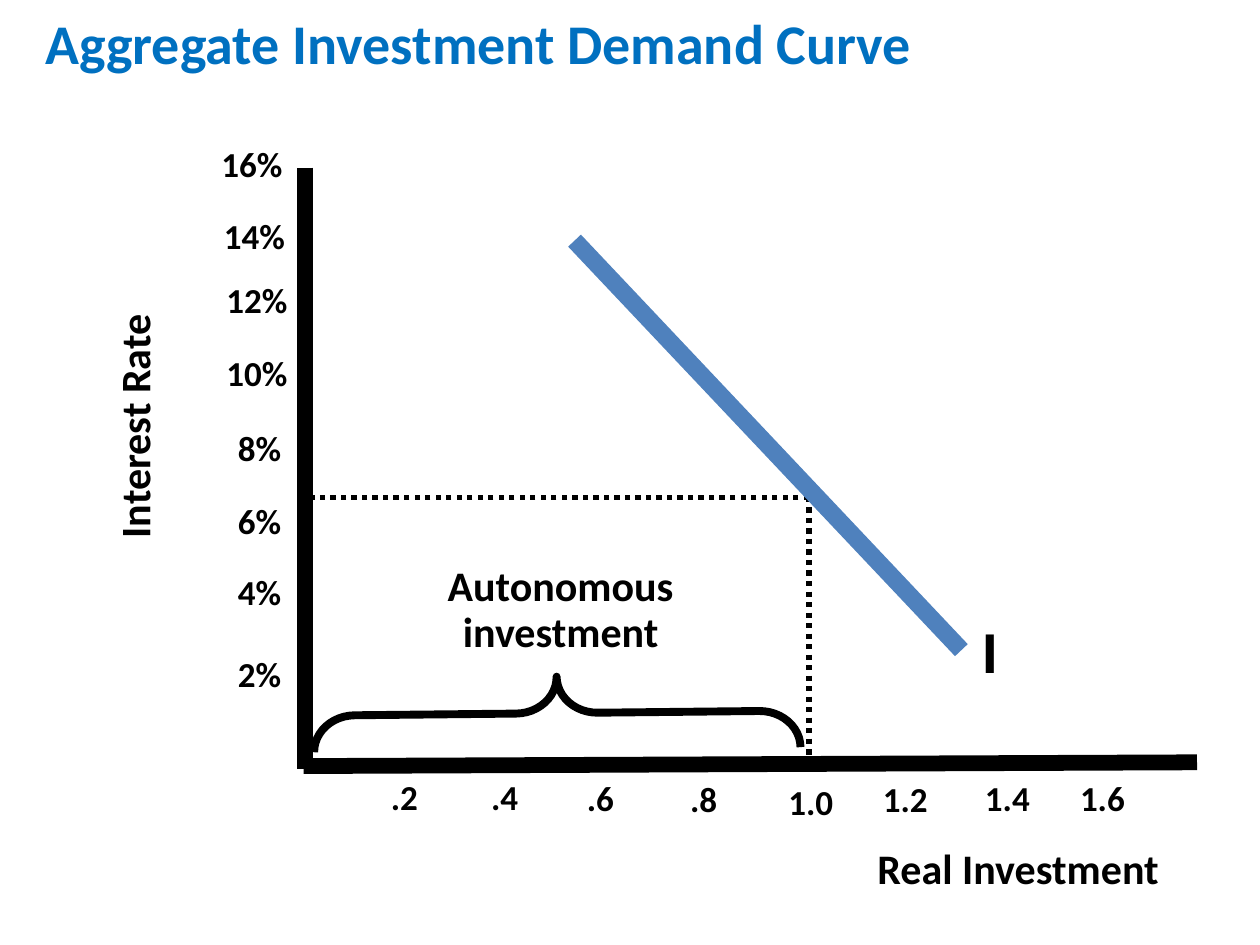
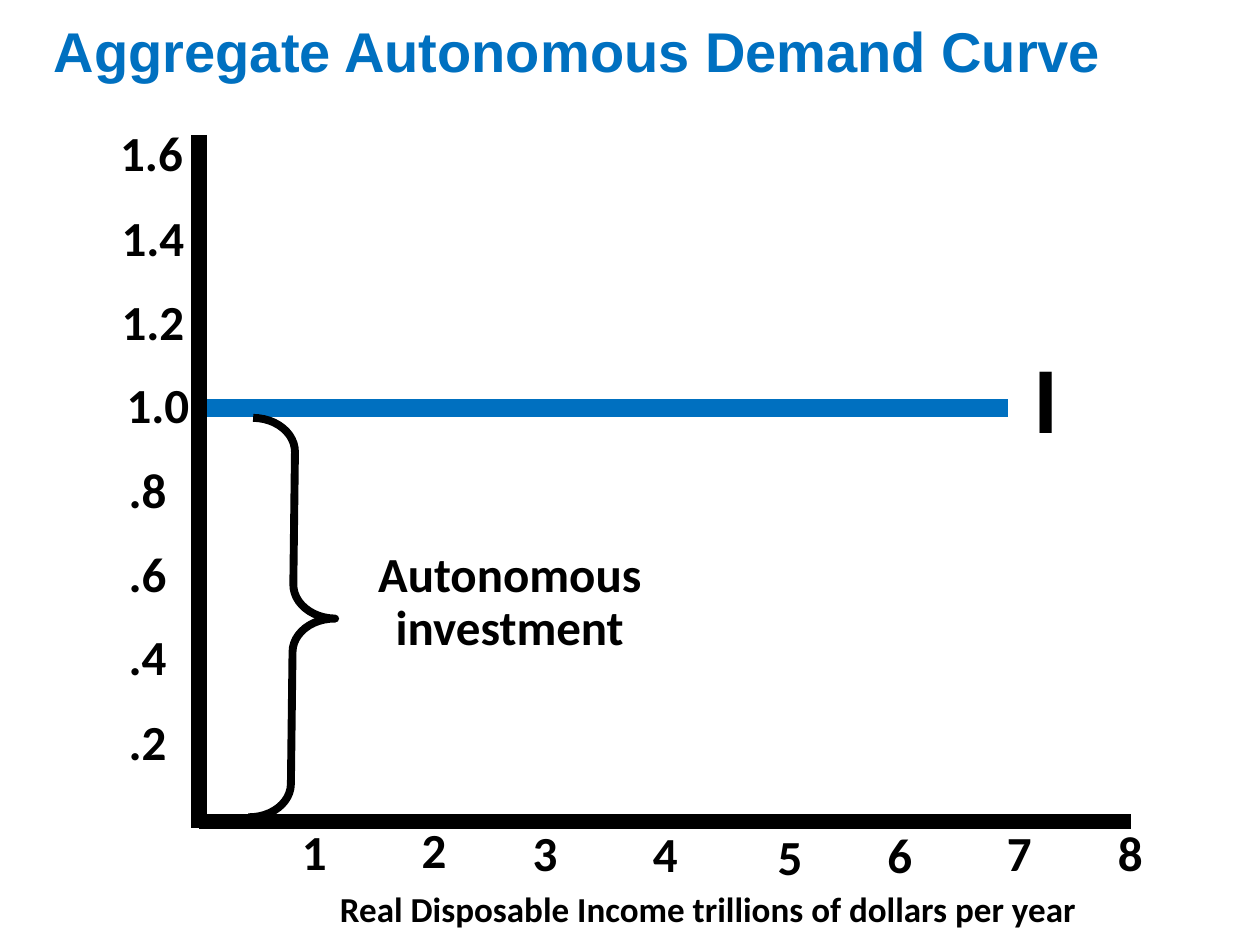
from pptx import Presentation
from pptx.dml.color import RGBColor
from pptx.enum.dml import MSO_LINE as Dash
from pptx.enum.shapes import MSO_CONNECTOR as Connector, MSO_SHAPE as Shape
from pptx.enum.text import MSO_AUTO_SIZE as AutoSize, PP_ALIGN as Align
from pptx.oxml.ns import qn
from pptx.util import Inches, Pt
from lxml.etree import SubElement

BLACK = RGBColor(0x00, 0x00, 0x00)
TITLE_BLUE = RGBColor(0x00, 0x70, 0xC0)
CURVE_BLUE = RGBColor(0x4F, 0x81, 0xBD)


class GraphDeck:
    """Hold the shared graph style and draw elements on the current slide."""

    font = "Calibri"
    axis_width = 9
    curve_width = 10
    brace_width = 4.5
    guide_width = 3

    def __init__(self):
        self.deck = Presentation()
        self.deck.slide_width = Inches(10)
        self.deck.slide_height = Inches(7.5)
        self.page = None

    def add_page(self):
        self.page = self.deck.slides.add_slide(self.deck.slide_layouts[6])

    def text(self, words, left, top, width, size, align=Align.CENTER, rotation=0, **changes):
        height = size * 0.0153 + 0.1
        if words == "Autonomous investment":
            height += size * 0.015
        box = self.page.shapes.add_textbox(*map(Inches, (left, top, width, height)))
        box.rotation = rotation
        box.text_frame.word_wrap = True
        box.text_frame.auto_size = AutoSize.SHAPE_TO_FIT_TEXT
        para = box.text_frame.paragraphs[0]
        para.alignment = align
        para.line_spacing = 0.9
        span = para.add_run()
        span.text = words
        color = changes.pop("color", BLACK)
        for name, value in {"name": self.font, "size": Pt(size), "bold": True, **changes}.items():
            setattr(span.font, name, value)
        span.font.color.rgb = color

    def title(self, words, left, top, width, font=font):
        self.text(words, left, top, width, 32, Align.LEFT, color=TITLE_BLUE, name=font)

    def ticks(self, labels, size, align):
        for words, left, top, width in labels:
            self.text(words, left, top, width, size, align)

    def line(self, start, end, width, color=BLACK, dash=None):
        line = self.page.shapes.add_connector(Connector.STRAIGHT, *map(Inches, start + end))
        line.line.color.rgb = color
        line.line.width = Pt(width)
        line.line.dash_style = dash
        SubElement(line._element.spPr, qn("a:effectLst"))

    def brace(self, left, top, width, height, rotation, curl):
        brace = self.page.shapes.add_shape(
            Shape.LEFT_BRACE, *map(Inches, (left, top, width, height)))
        brace.shadow.inherit = False
        brace.rotation = rotation
        brace.adjustments[0] = curl
        brace.adjustments[1] = 0.5
        brace.fill.background()
        brace.line.color.rgb = BLACK
        brace.line.width = Pt(self.brace_width)


def draw_investment_demand(graph):
    rates = [
        ("16%", 1.13, 1.12, 1.21), ("14%", 1.13, 1.69, 1.23),
        ("12%", 1.08, 2.2, 1.3), ("10%", 1.08, 2.78, 1.3),
        ("8%", 1.26, 3.37, 1.07), ("6%", 1.26, 3.95, 1.07),
        ("4%", 1.33, 4.52, 1), ("2%", 1.33, 5.17, 1),
    ]
    investments = [
        (".2", 2.85, 6.14, 0.72), (".4", 3.72, 6.14, 0.57),
        (".6", 4.48, 6.15, 0.57), (".8", 5.19, 6.16, 0.79),
        ("1.0", 6.04, 6.18, 0.79), ("1.2", 6.79, 6.16, 0.79),
        ("1.4", 7.6, 6.15, 0.79), ("1.6", 8.36, 6.15, 0.78),
    ]
    graph.add_page()
    graph.title("Aggregate Investment Demand Curve", 0.26, 0.08, 8.25)
    graph.ticks(rates, 20, Align.RIGHT)
    graph.ticks(investments, 20, Align.CENTER)
    graph.text("Autonomous investment", 3.2, 4.44, 2.5, 24)
    graph.brace(4.13, 3.73, 0.58, 3.86, 89.4, 0.56)
    for start, end in [((6.42, 3.95), (2.42, 3.95)), ((6.42, 3.86), (6.42, 6.1))]:
        graph.line(start, end, graph.guide_width, dash=Dash.ROUND_DOT)
    graph.text("Interest Rate", -0.3, 3.15, 2.78, 24, rotation=270)
    graph.text("Real Investment", 6.49, 6.68, 3.18, 24)
    graph.line((2.42, 1.33), (2.42, 6.1), graph.axis_width)
    graph.line((2.41, 6.08), (9.5, 6.05), graph.axis_width)
    graph.text("I", 7.7, 4.91, 1.05, 32, Align.LEFT, name="Arial")
    graph.line((4.56, 1.91), (7.63, 5.16), graph.curve_width, CURVE_BLUE)


def draw_autonomous_demand(graph):
    levels = [
        ("1.6", 0.55, 1), ("1.4", 0.54, 1.02), ("1.2", 0.54, 1.02), ("1.0", 0.83, 0.77),
        *((level, 0.69, 0.73) for level in (".8", ".6", ".4", ".2")),
    ]
    incomes = [
        ("1", 2.08, 6.52, 0.83), ("2", 3.11, 6.51, 0.67),
        ("3", 3.99, 6.53, 0.67), ("4", 4.82, 6.54, 0.92),
        ("5", 5.81, 6.56, 0.92), ("6", 6.68, 6.55, 0.92),
        ("7", 7.63, 6.53, 0.92), ("8", 8.51, 6.53, 0.92),
    ]
    graph.add_page()
    graph.line((1.58, 3.24), (8, 3.24), graph.curve_width, TITLE_BLUE)
    graph.line((1.58, 6.52), (8.98, 6.52), graph.axis_width)
    graph.ticks([(words, left, 0.98 + row * 2 / 3, width)
                 for row, (words, left, width) in enumerate(levels)], 28, Align.RIGHT)
    graph.ticks(incomes, 28, Align.CENTER)
    graph.line((1.58, 1.07), (1.58, 6.57), graph.axis_width)
    graph.text("Autonomous investment", 2.67, 4.32, 2.75, 28)
    graph.brace(1.99, 3.32, 0.67, 3.17, 180.7, 0.4)
    graph.text("Real Disposable Income trillions of dollars per year", 2.12, 7.03, 7, 20)
    graph.title("Aggregate Autonomous Demand Curve", 0.33, 0.14, 9.5, "Arial")
    graph.text("I", 7.92, 2.74, 0.58, 54, Align.RIGHT)


def main():
    graph = GraphDeck()
    draw_investment_demand(graph)
    draw_autonomous_demand(graph)
    graph.deck.save("out.pptx")


if __name__ == "__main__":
    main()
